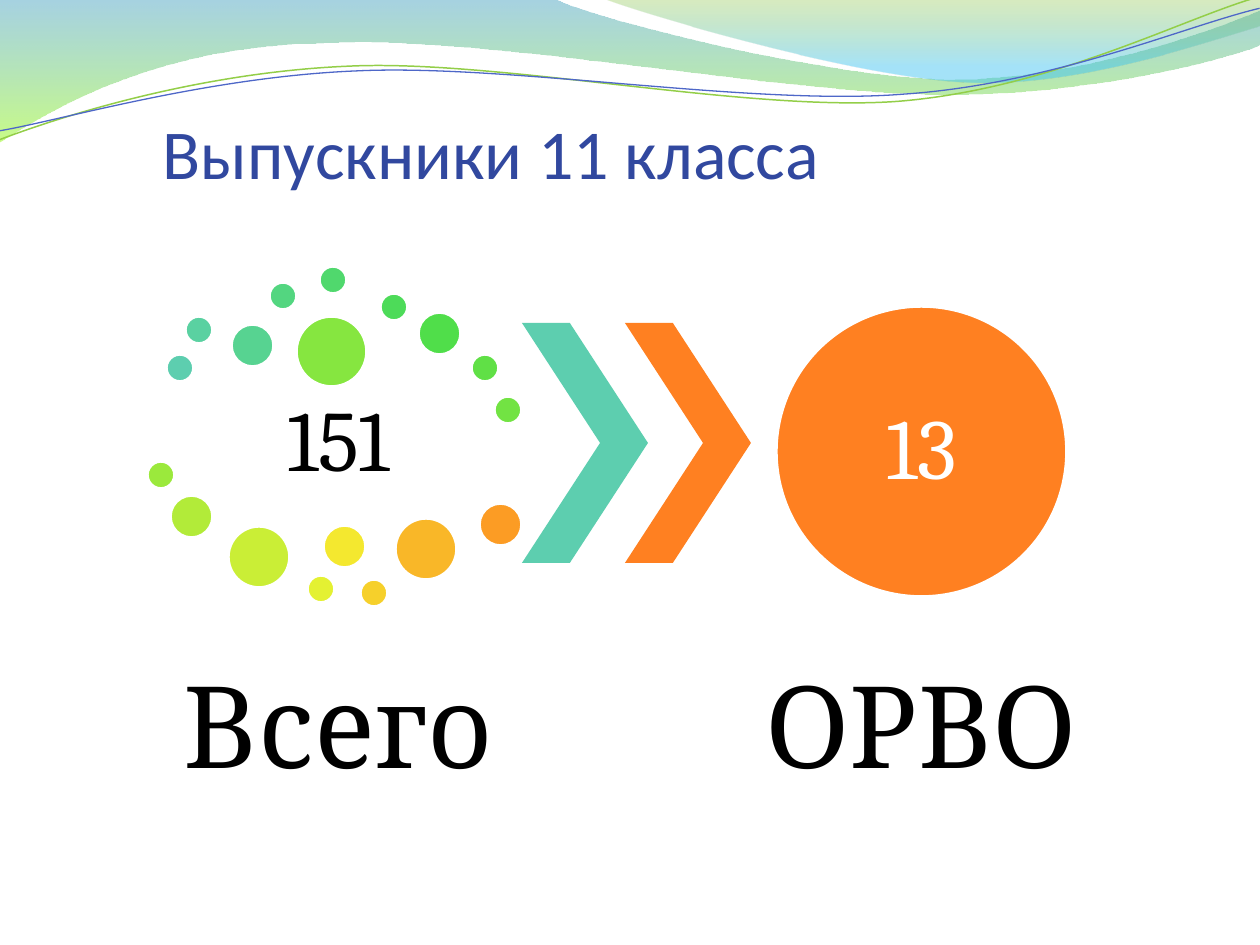
from lxml.etree import SubElement
from pptx import Presentation
from pptx.dml.color import RGBColor
from pptx.enum.shapes import MSO_SHAPE
from pptx.enum.text import MSO_ANCHOR, PP_ALIGN
from pptx.oxml.ns import qn
from pptx.util import Emu, Pt

SCALE = 914400 / 126

WHITE = RGBColor(0xFF, 0xFF, 0xFF)
BLACK = RGBColor(0x00, 0x00, 0x00)
NAVY = RGBColor(0x31, 0x48, 0x9F)
BLUE = RGBColor(0x4E, 0x67, 0xC8)
GREEN = RGBColor(0x93, 0xCE, 0x48)
TEAL = RGBColor(0x5D, 0xCE, 0xAF)
ORANGE = RGBColor(0xFF, 0x80, 0x21)
DEEP_BLUE = RGBColor(0x3B, 0x9C, 0xBF)
LIME = RGBColor(0x9C, 0xFA, 0x24)
LEAF = RGBColor(0x7E, 0xBE, 0x2C)
SKY = RGBColor(0x39, 0xC1, 0xF1)

LEFT_WAVE = [
    (0, 0), (554, -1),
    (600, 21, 837, 79, 955, 79), (1075, 79, 1207, 33, 1260, 11), (1261, 45),
    (1239, 55, 1096, 96, 940, 94), (784, 94, 481, 35, 324, 43),
    (163, 45, 58, 105, -1, 142),
]
RIGHT_WAVE = [
    (604, -1), (641, 14, 859, 78, 969, 82), (1079, 87, 1211, 40, 1260, 26),
    (1260, 0),
]
GREEN_CURVE = [
    (-3, 110), (58, 90, 199, 52, 350, 53), (499, 53, 745, 118, 896, 114),
    (1049, 109, 1184, 45, 1260, 27),
]
BLUE_CURVE = [
    (-2, 101), (57, 94, 207, 57, 357, 58), (509, 58, 750, 112, 902, 107),
    (1052, 104, 1187, 52, 1262, 38),
]
CURVE_TILT = 357.3

SMALL, MEDIUM, LARGE, LARGEST = 28, 43, 62, 71
DOTS = [
    (166, 354, SMALL, "5DCEAF"), (185, 316, SMALL, "5AD1A1"),
    (231, 324, MEDIUM, "57D391"), (269, 282, SMALL, "53D680"),
    (319, 266, SMALL, "50D86D"), (380, 293, SMALL, "4DDB59"),
    (418, 312, MEDIUM, "50DE4A"), (471, 354, SMALL, "60E046"),
    (494, 396, SMALL, "72E343"), (296, 316, LARGEST, "86E640"),
    (147, 461, SMALL, "9BE93C"), (170, 495, MEDIUM, "B2EB39"),
    (228, 526, LARGE, "CAEE36"), (307, 575, SMALL, "E4F132"),
    (323, 525, MEDIUM, "F4E82F"), (360, 579, SMALL, "F6D02B"),
    (395, 518, LARGE, "F9B728"), (479, 503, MEDIUM, "FC9C24"),
]


def px(n):
    """Turn pixels into EMU."""
    return Emu(round(n * SCALE))


def add_outline(s, segments, close):
    """Draw lines and cubic curves as one freeform."""
    anchors = [seg[-2:] for seg in segments]
    left, top = (min(values) for values in zip(*anchors))
    builder = s.shapes.build_freeform(*anchors[0], scale=SCALE)
    builder.add_line_segments(anchors[1:], close=close)
    sp = builder.convert_to_shape()
    sp.shadow.inherit = False
    lines = list(sp._element.spPr.iter(qn("a:lnTo")))
    for line, seg in zip(lines, segments[1:]):
        if len(seg) == 6:
            curve = SubElement(line.getparent(), qn("a:cubicBezTo"))
            for x, y in zip(seg[::2], seg[1::2]):
                pt = SubElement(curve, qn("a:pt"))
                pt.set("x", str(x - left))
                pt.set("y", str(y - top))
            line.getparent().replace(line, curve)
    return sp


def add_wave(s, segments, stops):
    """Add a translucent wave with a vertical gradient."""
    sp = add_outline(s, segments, True)
    sp.line.fill.background()
    sp.fill.gradient()
    sp.fill.gradient_angle = 270
    for stop, (position, color, _) in zip(sp.fill.gradient_stops, stops):
        stop.position = position
        stop.color.rgb = color
    colors = sp._element.spPr.iter(qn("a:srgbClr"))
    for clr, (_, _, opacity) in zip(list(colors), stops):
        SubElement(clr, qn("a:alpha")).set("val", str(opacity * 1000))


def add_curve(s, segments, color, width):
    """Add a tilted open curved line."""
    sp = add_outline(s, segments, False)
    sp.rotation = CURVE_TILT
    sp.fill.background()
    sp.line.color.rgb = color
    sp.line.width = Pt(width)


def add_filled(s, kind, box, color):
    """Add a preset shape with a plain fill and no line."""
    sp = s.shapes.add_shape(kind, *map(px, box))
    sp.shadow.inherit = False
    sp.fill.solid()
    sp.fill.fore_color.rgb = color
    sp.line.fill.background()
    return sp


def add_circle(s, x, y, size, color):
    """Add a circle with a white rim."""
    sp = add_filled(s, MSO_SHAPE.OVAL, (x, y, size, size), color)
    sp.line.color.rgb = WHITE
    sp.line.width = Pt(2)


def add_chevron(s, x, color):
    """Add a tall chevron."""
    sp = add_filled(s, MSO_SHAPE.CHEVRON, (x, 323, 126, 240), color)
    sp.adjustments[0] = 0.62


def add_text(s, box, text, size, color, font="Cambria", spacing=0.9,
             anchor=MSO_ANCHOR.MIDDLE, insets=(0, 0, 0, 0)):
    """Add a centred line of text."""
    tf = s.shapes.add_textbox(*map(px, box)).text_frame
    tf.word_wrap = True
    tf.vertical_anchor = anchor
    tf.margin_left, tf.margin_top, tf.margin_right, tf.margin_bottom = map(px, insets)
    p = tf.paragraphs[0]
    p.alignment = PP_ALIGN.CENTER
    p.line_spacing = spacing
    r = p.add_run()
    r.text = text
    r.font.name = font
    r.font.size = Pt(size)
    r.font.color.rgb = color


def main():
    """Build the slide and save it."""
    prs = Presentation()
    prs.slide_width, prs.slide_height = px(1260), px(945)
    s = prs.slides.add_slide(prs.slide_layouts[6])
    add_wave(s, LEFT_WAVE, [(0, DEEP_BLUE, 45), (1, LIME, 55)])
    add_wave(s, RIGHT_WAVE, [(0, LEAF, 30), (0.8, SKY, 45)])
    add_curve(s, GREEN_CURVE, GREEN, 0.85)
    add_curve(s, BLUE_CURVE, BLUE, 0.75)
    add_text(s, (94, 116, 794, 78), "Выпускники 11 класса", 40, NAVY, "Calibri",
             1.0, MSO_ANCHOR.BOTTOM, (0, 6, 0, 0))
    add_text(s, (167, 388, 343, 112), "151", 49, BLACK, insets=(9,) * 4)
    for x, y, size, color in DOTS:
        add_circle(s, x, y, size, RGBColor.from_string(color))
    add_chevron(s, 522, TEAL)
    add_chevron(s, 625, ORANGE)
    add_circle(s, 776, 306, 291, ORANGE)
    add_text(s, (819, 349, 205, 205), "13", 49, WHITE)
    for x, label in ((167, "Всего"), (750, "ОРВО")):
        add_text(s, (x, 626, 343, 212), label, 65, BLACK, insets=(11,) * 4)
    prs.save("out.pptx")


if __name__ == "__main__":
    main()
